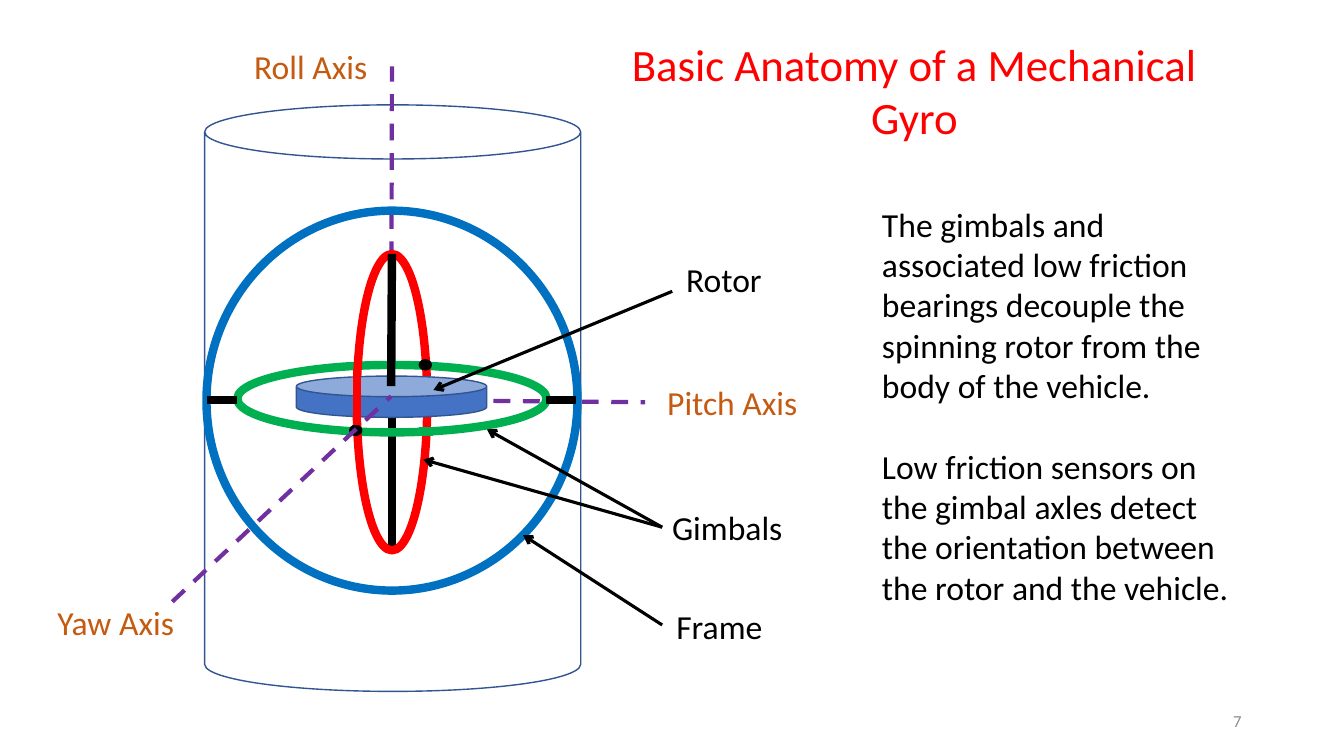
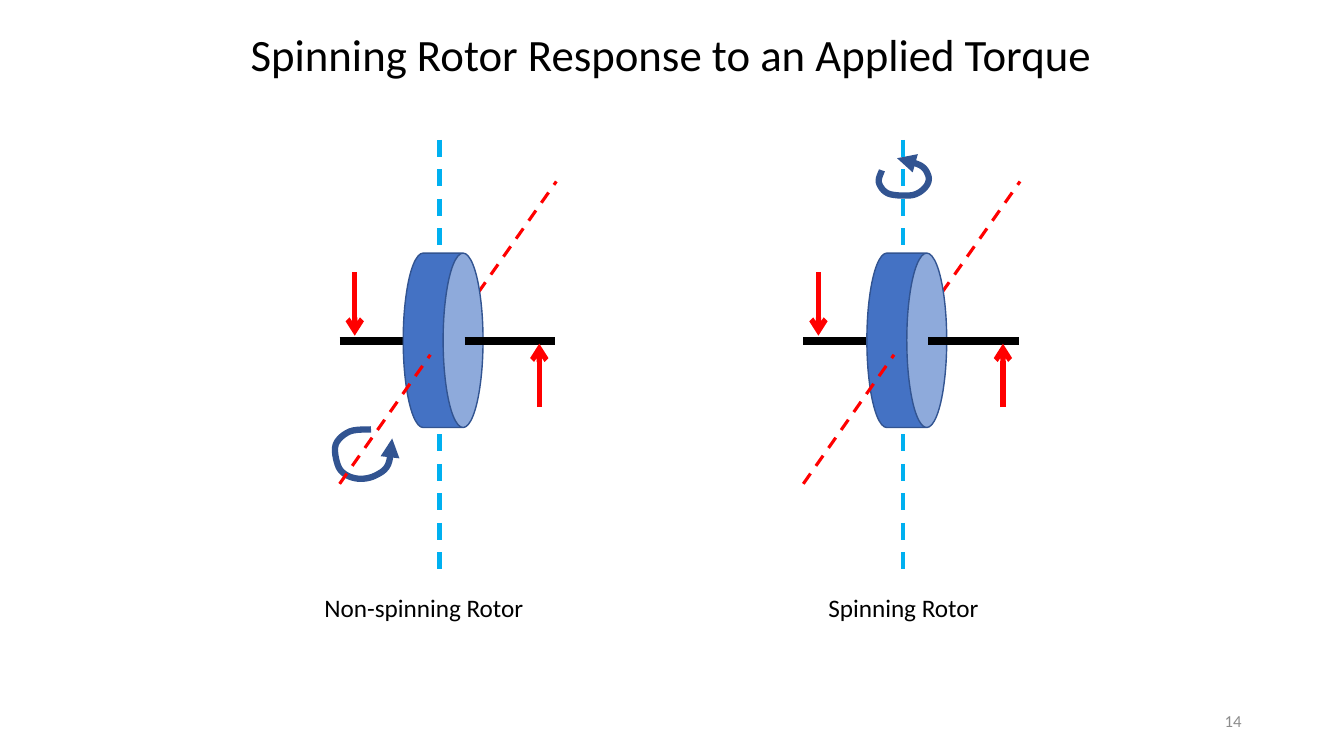
from pptx import Presentation
from pptx.dml.color import RGBColor
from pptx.enum.dml import MSO_LINE
from pptx.enum.shapes import MSO_CONNECTOR as CONN, MSO_SHAPE as SHAPE
from pptx.enum.text import MSO_ANCHOR as ANCHOR, MSO_AUTO_SIZE as AUTO, PP_ALIGN as ALIGN
from pptx.oxml.ns import qn
from pptx.util import Pt
from lxml.etree import SubElement

# Shared style
FONT = "Calibri"
BLACK, RED, GREEN, BLUE, SKY = "000000", "FF0000", "00B050", "0070C0", "00B0F0"
PURPLE, ORANGE, GREY, STEEL, NAVY = "7030A0", "C55A11", "8C8C8C", "4472C4", "325491"

# Gyro anatomy: content
GYRO_TITLE = "Basic Anatomy of a Mechanical Gyro"
GYRO_NOTES = [
    "The gimbals and associated low friction bearings decouple the spinning rotor "
    "from the body of the vehicle.",
    "Low friction sensors on the gimbal axles detect the orientation between the "
    "rotor and the vehicle.",
]
GYRO_LABELS = [  # text, left, top, colour
    ("Rotor", 483, 181.5, BLACK),
    ("Pitch Axis", 469.5, 269.5, ORANGE),
    ("Yaw Axis", 34, 426.5, ORANGE),
    ("Roll Axis", 174.5, 29.5, ORANGE),
    ("Gimbals", 473, 358.5, BLACK),
    ("Frame", 476, 429, BLACK),
]
CENTRE_X = 280
RINGS = [  # centre y, width, height, colour
    (284.8, 221, 48.2, GREEN),
    (287.3, 50.4, 211.7, RED),
    (286.2, 265, 271.4, BLUE),
]
BEARINGS = [(249.8, 303.8), (299.5, 257)]
BACK_AXES = [(289.4, 285.8, 460.8, 287.3), (279.4, 268.6, 280, 47.5)]
LOWER_SPINDLE = (280, 392.4, 280, 297.4)
AXLES = [(390.2, 285.8, 411.8, 285.8), (147.6, 285.8, 169.2, 285.8)]
RED_OVERLAP = (254.9, 264.2, 254.9, 303.8)
UPPER_SPINDLE = (279.4, 275.8, 280, 181.4)
YAW_AXIS = (123.1, 429.8, 279.4, 283)
GREEN_OVERLAP = (299.5, 308.2, 309.6, 308.2)
POINTERS = [
    (480.2, 208.1, 309.6, 278.6),
    (473, 376.6, 302.4, 328.3),
    (473, 376.6, 347.8, 306.7),
    (473, 446.4, 373.7, 382.3),
]

# Torque response: content
TORQUE_TITLE = "Spinning Rotor Response to an Applied Torque"
ROTORS = [("Non-spinning Rotor", 0), ("Spinning Rotor", 331.2)]  # label, shift
ROTOR_LABEL_LEFTS = [224.6, 584.6]
TURN_ARROWS = [
    [(630, 121.7), (627.8, 130.3), (634.3, 138.2), (648.7, 139.7), (656.6, 137.5),
     (662.4, 131.8), (663.1, 125.3), (657.4, 118.1), (640.8, 113)],
    [(265, 306.7), (249.8, 308.2), (239.8, 317.5), (241.2, 331.9), (247, 339.1),
     (257, 342), (267.8, 339.8), (277.2, 331.9), (280.1, 313.2)],
]


def rgb(colour):
    return RGBColor.from_string(colour)


def style_line(line, colour, width, dash=False, arrow=None):
    line.color.rgb = rgb(colour)
    line.width = Pt(width)
    if dash:
        line.dash_style = MSO_LINE.DASH
    if arrow:
        SubElement(line._get_or_add_ln(), qn("a:tailEnd"), type=arrow)


def add_line(shapes, ends, colour, width, dash=False, arrow=None):
    c = shapes.add_connector(CONN.STRAIGHT, *[Pt(v) for v in ends])
    style_line(c.line, colour, width, dash, arrow)
    SubElement(c._element.spPr, qn("a:effectLst"))


def add_figure(shapes, kind, box, colour, width, fill=None):
    s = shapes.add_shape(kind, *[Pt(v) for v in box])
    s.shadow.inherit = False
    if fill:
        s.fill.solid()
        s.fill.fore_color.rgb = rgb(fill)
    else:
        s.fill.background()
    style_line(s.line, colour, width)
    return s


def add_curve(shapes, knots, colour, width):
    """Smooth open curve through the knots, ending in an arrowhead."""
    padded = [knots[0], *knots, knots[-1]]
    steps = 6
    points = []
    for a, b, c, d in zip(padded, padded[1:], padded[2:], padded[3:]):
        for t in [n / steps for n in range(1, steps + 1)]:
            points.append(tuple(
                Pt(q + t * (r - p) / 2 + t**2 * (2 * p - 5 * q + 4 * r - s) / 2
                   + t**3 * (3 * q - p - 3 * r + s) / 2)
                for p, q, r, s in zip(a, b, c, d)))
    start_x, start_y = knots[0]
    builder = shapes.build_freeform(Pt(start_x), Pt(start_y))
    builder.add_line_segments(points, close=False)
    s = builder.convert_to_shape()
    s.shadow.inherit = False
    s.fill.background()
    style_line(s.line, colour, width, arrow="triangle")


def set_text(s, box, paragraphs, size, colour, align=ALIGN.LEFT, anchor=ANCHOR.TOP, gap=0):
    s.left, s.top, s.width, s.height = [Pt(v) for v in box]
    tf = s.text_frame
    tf.text = "\n".join(paragraphs)
    tf.word_wrap, tf.auto_size, tf.vertical_anchor = True, AUTO.NONE, anchor
    for i, p in enumerate(tf.paragraphs):
        p.alignment = align
        p.space_before = Pt(gap if i else 0)
        for r in p.runs:
            r.font.name, r.font.size = FONT, Pt(size)
            r.font.color.rgb = rgb(colour)


def add_label(shapes, box, text, size, colour, **kw):
    set_text(shapes.add_textbox(0, 0, 0, 0), box, [text], size, colour, **kw)


def new_slide(prs, layout, title, box, colour, number):
    slide = prs.slides.add_slide(prs.slide_layouts[layout])
    set_text(slide.shapes.title, box, [title], 32, colour, align=ALIGN.CENTER)
    add_label(slide.shapes, (678, 500.5, 216, 28.8), number, 12, GREY,
              align=ALIGN.RIGHT, anchor=ANCHOR.MIDDLE)
    return slide


def build_gyro(prs):
    slide = new_slide(prs, 1, GYRO_TITLE, (439, 22.3, 428.4, 85), RED, "7")
    shapes = slide.shapes

    # Explanation
    body = slide.placeholders[1]
    set_text(body, (622.8, 141.8, 270.7, 298), GYRO_NOTES, 24, BLACK, gap=29)
    for p in body.text_frame.paragraphs:
        pPr = p._p.get_or_add_pPr()
        pPr.set("marL", "0")
        pPr.set("indent", "0")
        SubElement(pPr, qn("a:buNone"))

    # Vehicle body, axes behind the gyro, labels
    can = add_figure(shapes, SHAPE.CAN, (146.2, 74.9, 268.6, 419), NAVY, 1)
    can.adjustments[0] = 0.144
    for ends in BACK_AXES:
        add_line(shapes, ends, PURPLE, 3, dash=True)
    for text, left, top, colour in GYRO_LABELS:
        add_label(shapes, (left, top, 130, 36), text, 24, colour)

    # Frame, gimbals and bearings
    add_line(shapes, LOWER_SPINDLE, BLACK, 6)
    for y, w, h, colour in RINGS:
        add_figure(shapes, SHAPE.OVAL, (CENTRE_X - w / 2, y - h / 2, w, h), colour, 6)
    for left, top in BEARINGS:
        add_figure(shapes, SHAPE.OVAL, (left, top, 8.6, 7.2), BLACK, 1, BLACK)
    for ends in AXLES:
        add_line(shapes, ends, BLACK, 6)

    # Rotor, with the parts that pass in front of it
    rotor = add_figure(shapes, SHAPE.CAN, (211.7, 268.6, 136, 29.5), NAVY, 1, STEEL)
    rotor.adjustments[0] = 0.5
    add_line(shapes, RED_OVERLAP, RED, 6)
    add_line(shapes, UPPER_SPINDLE, BLACK, 6)
    add_line(shapes, YAW_AXIS, PURPLE, 3, dash=True)
    add_line(shapes, GREEN_OVERLAP, GREEN, 6)
    for ends in POINTERS:
        add_line(shapes, ends, BLACK, 2.25, arrow="arrow")


def add_rotor(shapes, dx):
    """Rotor with its axle, axes and the applied force pair."""
    group = shapes.add_group_shape().shapes

    def line(x1, y1, x2, y2, *look, **kw):
        add_line(group, (x1 + dx, y1, x2 + dx, y2), *look, **kw)

    line(332.6, 221.8, 397.4, 129.6, RED, 2.25, dash=True)
    line(313.9, 100, 313.9, 406.8, SKY, 3, dash=True)
    line(242.6, 243.4, 307.4, 243.4, BLACK, 6)
    disc = add_figure(group, SHAPE.CAN, (254.2 + dx, 214.6, 124.6, 57), NAVY, 1, STEEL)
    disc.rotation = 90
    disc.adjustments[0] = 0.5
    line(331.9, 243.4, 396.7, 243.4, BLACK, 6)
    line(385.2, 290.9, 385.2, 245.5, RED, 3.75, arrow="arrow")
    line(253.4, 194.4, 253.4, 239.8, RED, 3.75, arrow="arrow")
    line(242.6, 345.6, 307.4, 253.4, RED, 2.25, dash=True)


def build_torque(prs):
    slide = new_slide(prs, 5, TORQUE_TITLE, (165.6, 15.8, 627.8, 46), BLACK, "14")
    shapes = slide.shapes
    for knots in TURN_ARROWS:
        add_curve(shapes, knots, NAVY, 4.5)
    for (text, dx), left in zip(ROTORS, ROTOR_LABEL_LEFTS):
        add_rotor(shapes, dx)
        add_label(shapes, (left, 419.8, 180, 29), text, 18, BLACK)


def main():
    prs = Presentation()
    prs.slide_width, prs.slide_height = Pt(960), Pt(540)
    build_gyro(prs)
    build_torque(prs)
    prs.save("out.pptx")


if __name__ == "__main__":
    main()
